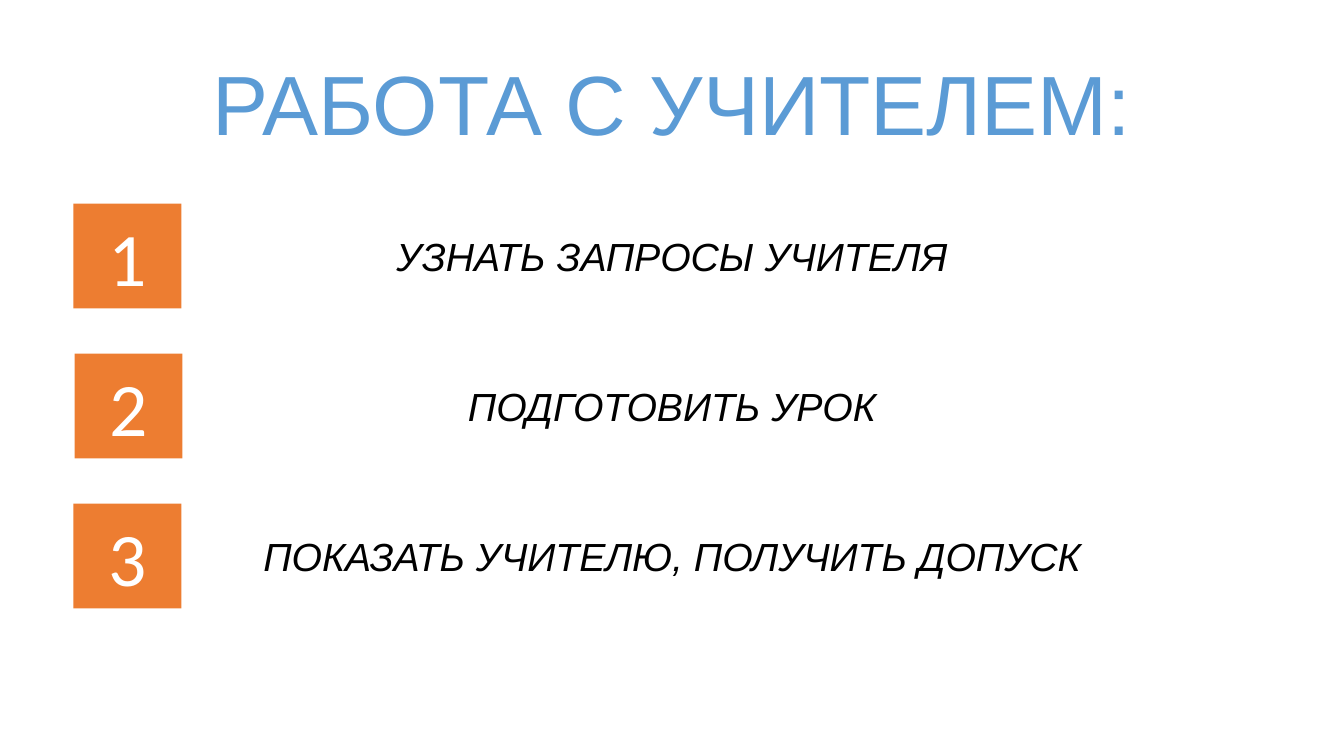
from dataclasses import dataclass

from pptx import Presentation
from pptx.dml.color import RGBColor
from pptx.enum.shapes import MSO_SHAPE as Kind
from pptx.enum.text import MSO_ANCHOR as Anchor, MSO_AUTO_SIZE as Fit, PP_ALIGN as Align
from pptx.shapes.autoshape import Shape
from pptx.slide import Slide
from pptx.util import Cm, Pt

WIDTH = 33.87
TOP = 5.13
PITCH = 3.78
BOX_W = 2.72
BOX_H = 2.64
LINE_H = 1.45


@dataclass
class Step:
    text: str
    left: float


STEPS = [
    Step("УЗНАТЬ ЗАПРОСЫ УЧИТЕЛЯ", 1.85),
    Step("ПОДГОТОВИТЬ УРОК", 1.88),
    Step("ПОКАЗАТЬ УЧИТЕЛЮ, ПОЛУЧИТЬ ДОПУСК", 1.85),
]


def paint(tint: str) -> RGBColor:
    return RGBColor.from_string(tint)


def write(shape: Shape, text: str, *, size: float, tint: str,
          face: str = "Arial", slant: bool = False) -> None:
    frame = shape.text_frame
    frame.word_wrap = True
    part = frame.paragraphs[0]
    part.alignment = Align.CENTER
    run = part.add_run()
    run.text = text
    run.font.size = Pt(size)
    run.font.name = face
    run.font.italic = slant
    run.font.color.rgb = paint(tint)


def add_line(slide: Slide, top: float, height: float) -> Shape:
    box = slide.shapes.add_textbox(Cm(0), Cm(top), Cm(WIDTH), Cm(height))
    box.text_frame.auto_size = Fit.SHAPE_TO_FIT_TEXT
    return box


def add_step(slide: Slide, index: int, step: Step) -> None:
    top = TOP + index * PITCH
    line = add_line(slide, top + (BOX_H - LINE_H) / 2, LINE_H)
    write(line, step.text, size=28, tint="000000", slant=True)
    box = slide.shapes.add_shape(Kind.RECTANGLE, Cm(step.left), Cm(top), Cm(BOX_W), Cm(BOX_H))
    box.shadow.inherit = False
    box.fill.solid()
    box.fill.fore_color.rgb = paint("ED7D31")
    box.line.fill.background()
    box.text_frame.vertical_anchor = Anchor.MIDDLE
    write(box, str(index + 1), size=54, tint="FFFFFF", face="Calibri")


def main() -> None:
    deck = Presentation()
    deck.slide_width = Cm(WIDTH)
    deck.slide_height = Cm(19.05)
    slide = deck.slides.add_slide(deck.slide_layouts[6])
    title = add_line(slide, 1.17, 2.82)
    write(title, "РАБОТА С УЧИТЕЛЕМ:", size=60, tint="5B9BD5")
    for index, step in enumerate(STEPS):
        add_step(slide, index, step)
    deck.save("out.pptx")


if __name__ == "__main__":
    main()
